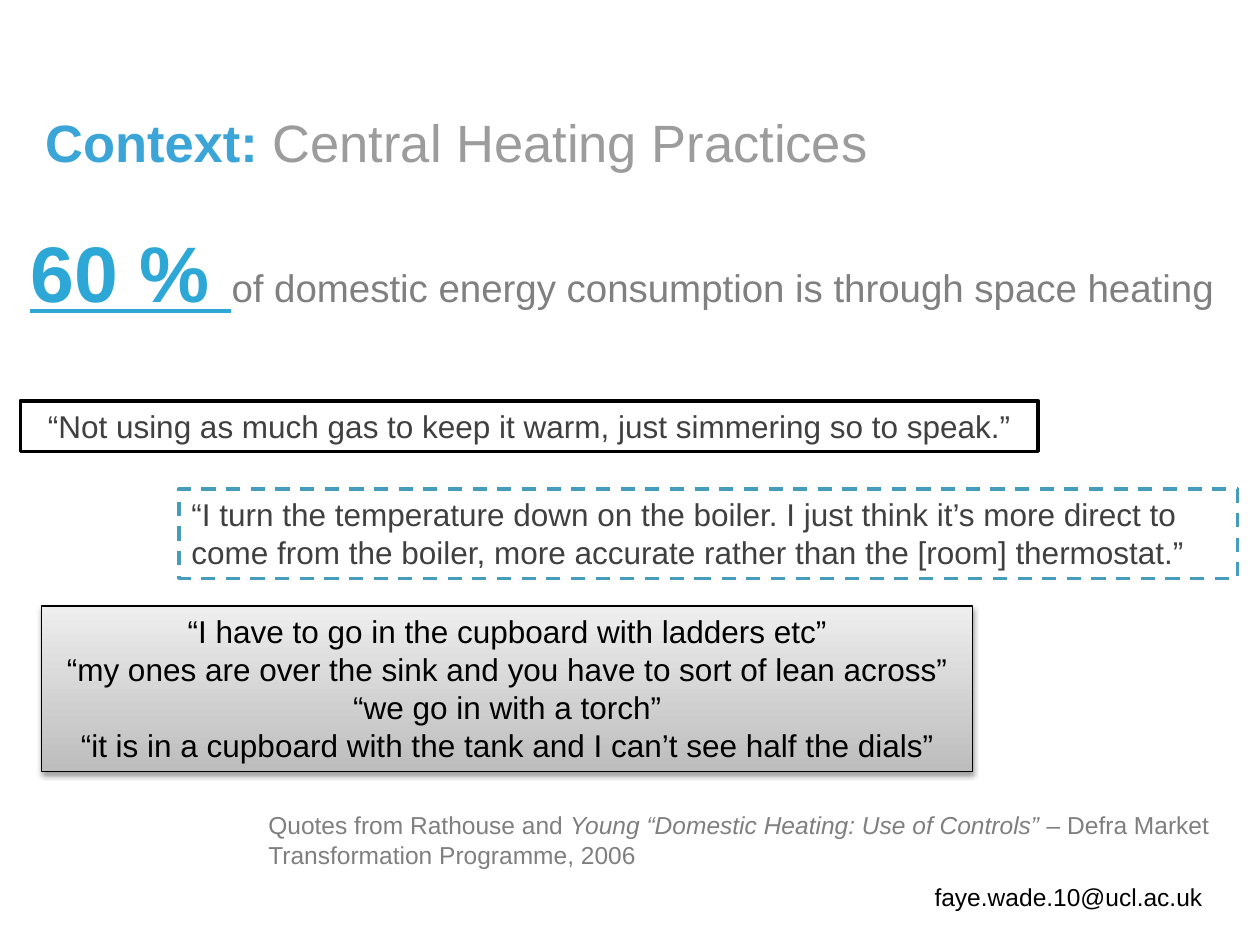
import pptx
import pptx.util
import pptx.dml.color
import pptx.enum.dml
import pptx.enum.shapes
import pptx.enum.text
import pptx.oxml

Cm, Pt = pptx.util.Cm, pptx.util.Pt
RGBColor = pptx.dml.color.RGBColor
PP_ALIGN = pptx.enum.text.PP_ALIGN
MSO_ANCHOR = pptx.enum.text.MSO_ANCHOR

BLACK = RGBColor(0x00, 0x00, 0x00)
WHITE = RGBColor(0xFF, 0xFF, 0xFF)
SKY = RGBColor(0x3B, 0xA5, 0xD8)
CYAN = RGBColor(0x2D, 0xA7, 0xD5)
TEAL = RGBColor(0x45, 0x9C, 0xBD)
TITLE_GREY = RGBColor(0x9C, 0x9C, 0x9C)
TEXT_GREY = RGBColor(0x80, 0x80, 0x80)
SOURCE_GREY = RGBColor(0x7F, 0x7F, 0x7F)
QUOTE_GREY = RGBColor(0x40, 0x40, 0x40)
GRADIENT_TOP = RGBColor(0xEE, 0xEE, 0xEE)
GRADIENT_BOTTOM = RGBColor(0xBD, 0xBD, 0xBD)

SHADOW = (
    '<a:effectLst xmlns:a="http://schemas.openxmlformats.org/drawingml/2006/main">'
    '<a:outerShdw blurRad="40000" dist="20000" dir="5400000" rotWithShape="0">'
    '<a:srgbClr val="000000"><a:alpha val="38000"/></a:srgbClr>'
    '</a:outerShdw></a:effectLst>'
)


def add_span(para, text, size, color, bold=False, italic=False, underline=False):
    span = para.add_run()
    span.text = text
    font = span.font
    font.name = "Arial"
    font.size = Pt(size)
    font.color.rgb = color
    font.bold, font.italic, font.underline = bold, italic, underline


deck = pptx.Presentation()
deck.slide_width, deck.slide_height = Cm(25.4), Cm(19.05)
page = deck.slides.add_slide(deck.slide_layouts[5])

# Title
title = page.shapes.title
title.left, title.top, title.width, title.height = Cm(0.91), Cm(2.13), Cm(23.57), Cm(1.6)
frame = title.text_frame
frame.margin_left = frame.margin_right = frame.margin_bottom = 0
frame.margin_top = Cm(0.08)
frame.vertical_anchor = MSO_ANCHOR.TOP
frame.auto_size = pptx.enum.text.MSO_AUTO_SIZE.NONE
para = frame.paragraphs[0]
para.alignment = PP_ALIGN.LEFT
add_span(para, "Context: ", 30, SKY, bold=True)
add_span(para, "Central Heating Practices", 30, TITLE_GREY)

# Plain text: place, then the spans of its one paragraph
texts = [
    ((18.59, 17.65, 6.02, 1.02), [("faye.wade.10@ucl.ac.uk", 14, BLACK, {})]),
    ((0.36, 4.29, 24.59, 2.18), [
        ("60 % ", 45, CYAN, {"bold": True, "underline": True}),
        ("of domestic energy consumption is through space heating", 22, TEXT_GREY, {}),
    ]),
    ((5.16, 16.21, 19.79, 1.45), [
        ("Quotes from Rathouse and ", 14, SOURCE_GREY, {}),
        ("Young “Domestic Heating: Use of Controls”", 14, SOURCE_GREY, {"italic": True}),
        (" – Defra Market Transformation Programme, 2006", 14, SOURCE_GREY, {}),
    ]),
]
text_boxes = []
for place, spans in texts:
    box = page.shapes.add_textbox(*map(Cm, place))
    box.text_frame.word_wrap = True
    for text, size, color, style in spans:
        add_span(box.text_frame.paragraphs[0], text, size, color, **style)
    text_boxes.append(box)
text_boxes[1].text_frame.margin_top = Cm(0.23)

# Quotes: place, line colour and width, text colour, alignment, lines
quotes = [
    ((0.41, 8.08, 20.52, 1.02), BLACK, 2, QUOTE_GREY, PP_ALIGN.CENTER, [
        "“Not using as much gas to keep it warm, just simmering so to speak.”",
    ]),
    ((3.61, 9.86, 21.34, 1.8), TEAL, 2, QUOTE_GREY, PP_ALIGN.LEFT, [
        "“I turn the temperature down on the boiler. I just think it’s more direct to "
        "come from the boiler, more accurate rather than the [room] thermostat.”",
    ]),
    ((0.84, 12.22, 18.77, 3.33), BLACK, 0.75, BLACK, PP_ALIGN.CENTER, [
        "“I have to go in the cupboard with ladders etc”",
        "“my ones are over the sink and you have to sort of lean across”",
        "“we go in with a torch”",
        "“it is in a cupboard with the tank and I can’t see half the dials”",
    ]),
]
quote_boxes = []
for place, line_color, line_width, color, alignment, lines in quotes:
    box = page.shapes.add_shape(pptx.enum.shapes.MSO_SHAPE.RECTANGLE, *map(Cm, place))
    box.shadow.inherit = False
    box.fill.solid()
    box.fill.fore_color.rgb = WHITE
    box.line.color.rgb = line_color
    box.line.width = Pt(line_width)
    frame = box.text_frame
    frame.word_wrap = True
    frame.vertical_anchor = MSO_ANCHOR.MIDDLE
    for number, text in enumerate(lines):
        para = frame.add_paragraph() if number else frame.paragraphs[0]
        para.alignment = alignment
        add_span(para, text, 18, color)
    quote_boxes.append(box)

plain_box, dashed_box, shaded_box = quote_boxes
dashed_box.line.dash_style = pptx.enum.dml.MSO_LINE.DASH
dashed_box.text_frame.vertical_anchor = MSO_ANCHOR.TOP
shaded_box.text_frame.vertical_anchor = MSO_ANCHOR.TOP
shaded_box.fill.gradient()
shaded_box.fill.gradient_angle = 270
for stop, color in zip(shaded_box.fill.gradient_stops, (GRADIENT_TOP, GRADIENT_BOTTOM)):
    stop.color.rgb = color
properties = shaded_box.element.spPr
for effects in properties.findall(pptx.oxml.ns.qn("a:effectLst")):
    properties.replace(effects, pptx.oxml.parse_xml(SHADOW))

deck.save("out.pptx")
